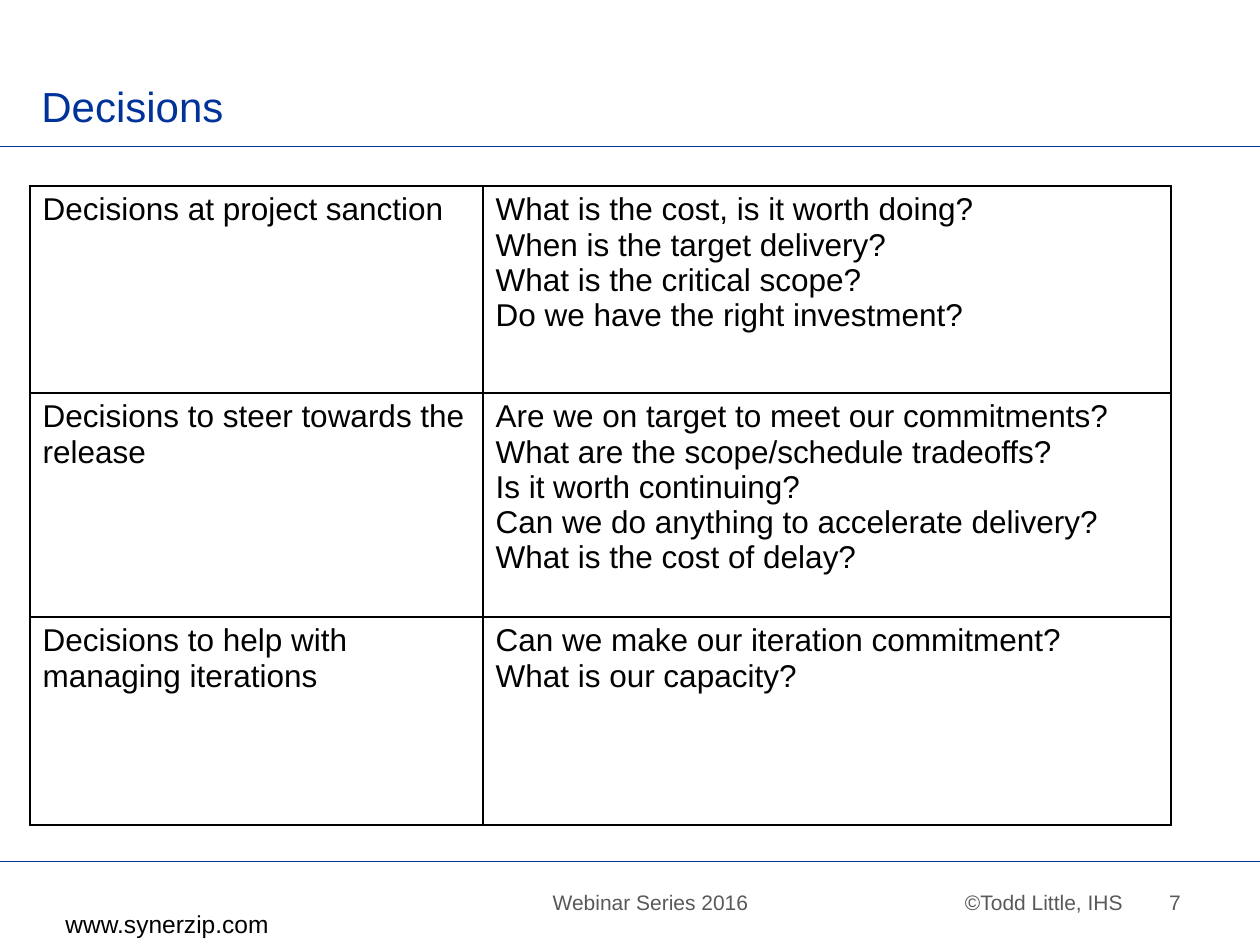
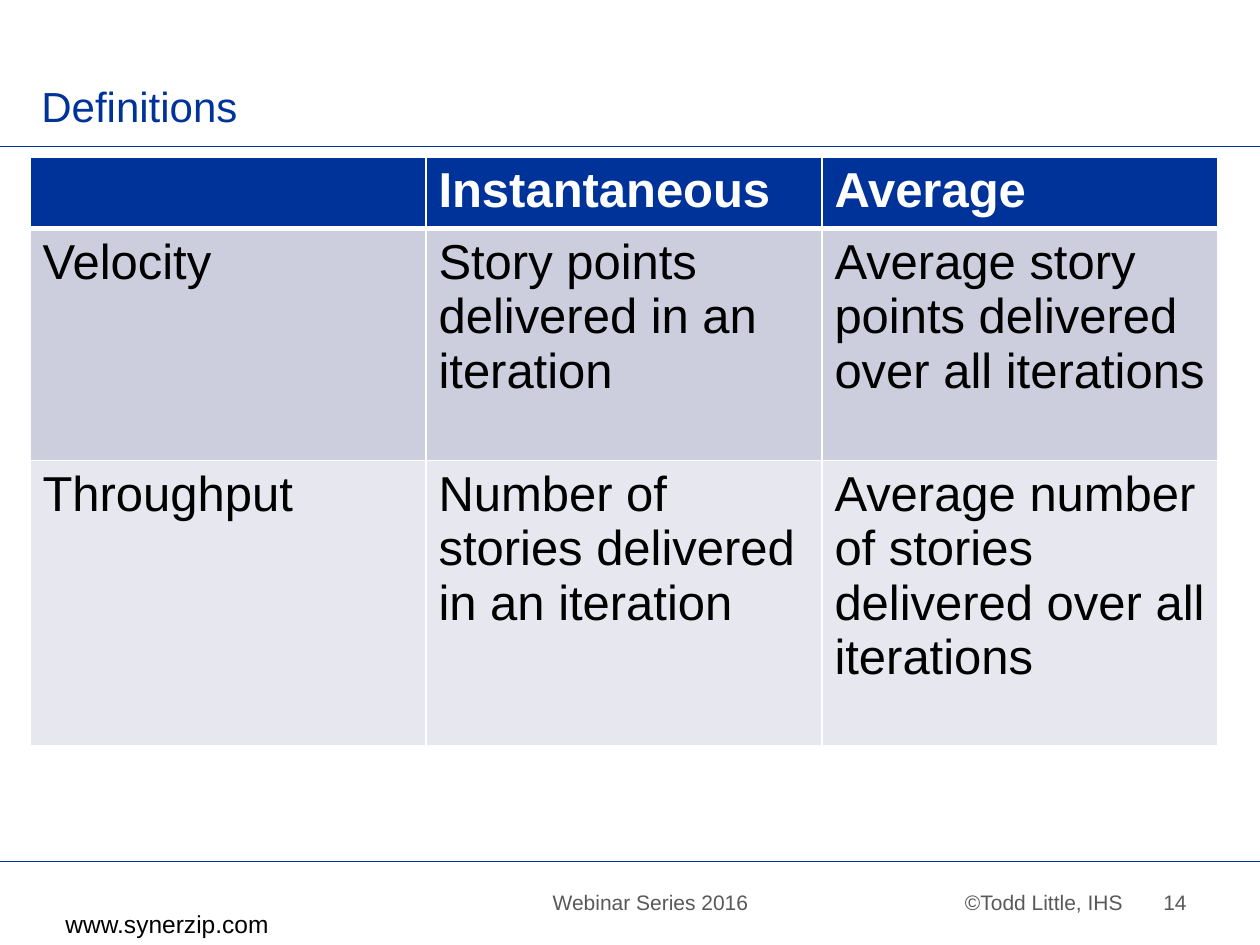
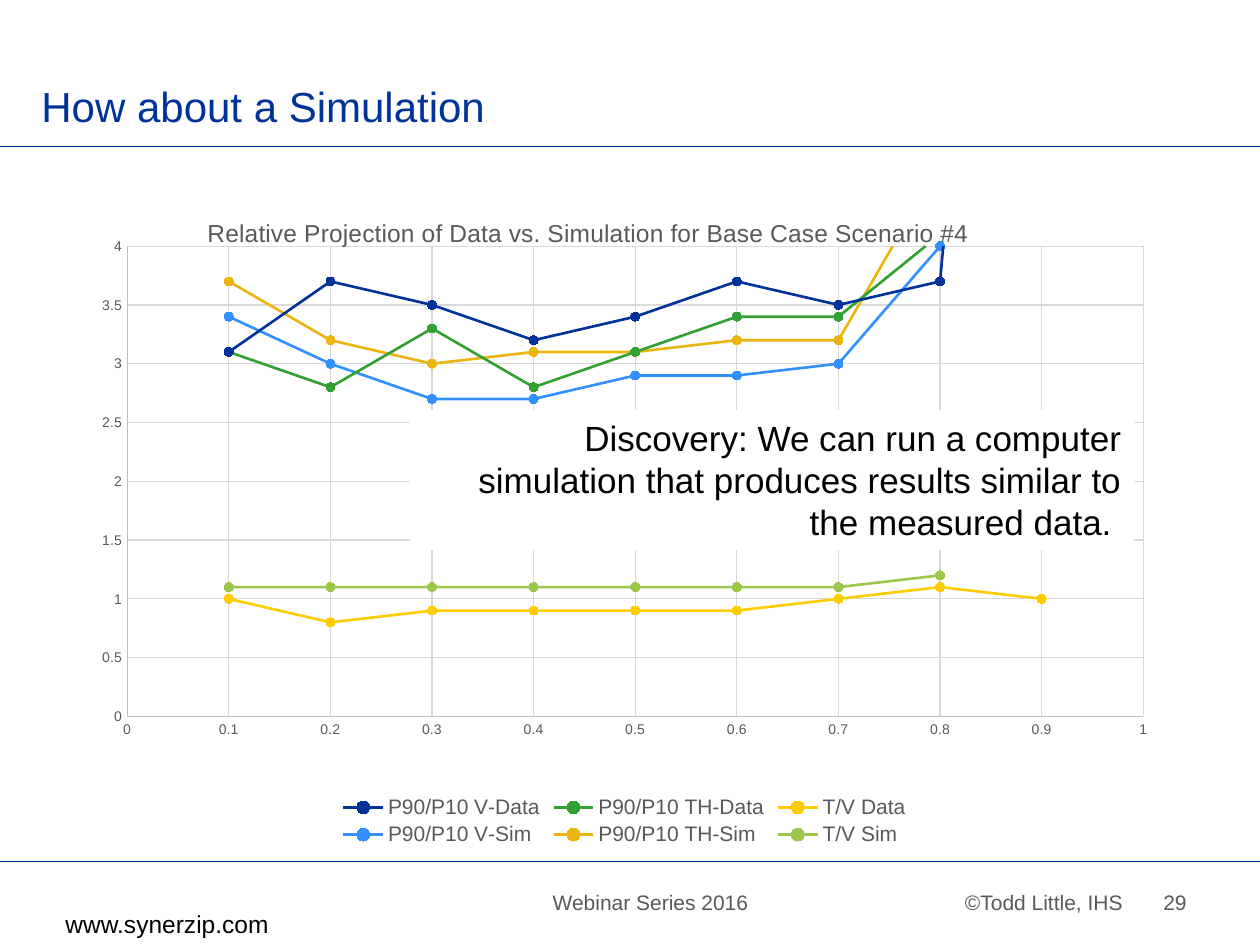
import dataclasses
import typing

import lxml.etree
import pptx
import pptx.chart.data
import pptx.dml.color
import pptx.enum.chart
import pptx.enum.shapes
import pptx.enum.text
import pptx.oxml.ns
import pptx.util

PX = 914400 / 126
FONT = "Arial"
COLORS = {
    "navy": "003399", "black": "000000", "white": "FFFFFF", "gray": "595959",
    "axis": "BFBFBF", "grid": "D9D9D9", "band": "CCCEDE", "pale": "E7E8EF",
    "green": "32A032", "yellow": "FFCC00", "blue": "3390FF",
    "gold": "EBB40F", "lime": "9BC84B",
}
ALIGN = pptx.enum.text.PP_ALIGN
ANCHOR = pptx.enum.text.MSO_ANCHOR
qn = pptx.oxml.ns.qn


@dataclasses.dataclass(frozen=True)
class Box:
    left: int
    top: int
    width: int
    height: int

    def emu(self) -> list[int]:
        return [px(value) for value in dataclasses.astuple(self)]


@dataclasses.dataclass(frozen=True)
class TextStyle:
    size: int
    color: str
    bold: bool = False


@dataclasses.dataclass(frozen=True)
class RowLook:
    height: int
    style: TextStyle
    fill: str | None = None
    bottom_border: int = 1


@dataclasses.dataclass(frozen=True)
class Series:
    name: str
    color: str
    values: tuple[float, ...]


TITLE = TextStyle(24, "navy")
FOOTER = TextStyle(12, "gray")
SITE = TextStyle(14, "black")
DECISION = TextStyle(18, "black")
DEFINITION = TextStyle(28, "black")
DEFINITION_HEAD = TextStyle(28, "white", True)
DISCOVERY = TextStyle(20, "black")

DECISIONS = (
    ("Decisions at project sanction",
     "What is the cost, is it worth doing?\n"
     "When is the target delivery?\n"
     "What is the critical scope?\n"
     "Do we have the right investment?"),
    ("Decisions to steer towards the release",
     "Are we on target to meet our commitments?\n"
     "What are the scope/schedule tradeoffs?\n"
     "Is it worth continuing?\n"
     "Can we do anything to accelerate delivery?\n"
     "What is the cost of delay?"),
    ("Decisions to help with managing iterations",
     "Can we make our iteration commitment?\n"
     "What is our capacity?"),
)
DEFINITIONS = (
    ("", "Instantaneous", "Average"),
    ("Velocity", "Story points delivered in an iteration",
     "Average story points delivered over all iterations"),
    ("Throughput", "Number of stories delivered in an iteration",
     "Average number of stories delivered over all iterations"),
)
SERIES = (
    Series("P90/P10 V-Data", "navy", (3.1, 3.7, 3.5, 3.2, 3.4, 3.7, 3.5, 3.7, 13.2)),
    Series("P90/P10 TH-Data", "green", (3.1, 2.8, 3.3, 2.8, 3.1, 3.4, 3.4, 4.1, 13.1)),
    Series("T/V Data", "yellow", (1, 0.8, 0.9, 0.9, 0.9, 0.9, 1, 1.1, 1)),
    Series("P90/P10 V-Sim", "blue", (3.4, 3, 2.7, 2.7, 2.9, 2.9, 3, 4)),
    Series("P90/P10 TH-Sim", "gold", (3.7, 3.2, 3, 3.1, 3.1, 3.2, 3.2, 4.7)),
    Series("T/V Sim", "lime", (1.1, 1.1, 1.1, 1.1, 1.1, 1.1, 1.1, 1.2)),
)


def px(value: int) -> int:
    return round(value * PX)


def rgb(name: str) -> pptx.dml.color.RGBColor:
    return pptx.dml.color.RGBColor.from_string(COLORS[name])


def set_font(font: typing.Any, style: TextStyle) -> None:
    font.name = FONT
    font.size = pptx.util.Pt(style.size)
    font.bold = style.bold
    font.color.rgb = rgb(style.color)


def set_line(line: typing.Any, color: str, width: float) -> None:
    line.color.rgb = rgb(color)
    line.width = pptx.util.Pt(width)


def write(frame: typing.Any, text: str, style: TextStyle, align: typing.Any = ALIGN.LEFT) -> None:
    """Make a paragraph of each line; a vertical tab breaks a line inside one."""
    for index, line in enumerate(text.split("\n")):
        para = frame.paragraphs[0] if index == 0 else frame.add_paragraph()
        para.alignment = align
        for part, words in enumerate(line.split("\v")):
            if part:
                para.add_line_break()
            if words:
                span = para.add_run()
                span.text = words
                set_font(span.font, style)


def add_text(page: typing.Any, box: Box, text: str, style: TextStyle,
             align: typing.Any = ALIGN.LEFT, anchor: typing.Any = ANCHOR.TOP,
             wrap: bool = True) -> typing.Any:
    frame = page.shapes.add_textbox(*box.emu()).text_frame
    frame.word_wrap = wrap
    frame.vertical_anchor = anchor
    write(frame, text, style, align)
    return frame


def add_rule(page: typing.Any, top: int) -> None:
    rule = page.shapes.add_connector(
        pptx.enum.shapes.MSO_CONNECTOR.STRAIGHT, 0, px(top), px(1260), px(top))
    set_line(rule.line, "navy", 0.5)
    lxml.etree.SubElement(rule._element.spPr, qn("a:effectLst"))


def add_credit(page: typing.Any, number: int) -> None:
    """Set the credit and the page number on one line, the number on a centred tab."""
    frame = page.shapes.add_textbox(*Box(945, 883, 262, 38).emu()).text_frame
    frame.word_wrap = True
    frame.margin_left = px(20)
    properties = frame.paragraphs[0]._p.get_or_add_pPr()
    tabs = lxml.etree.SubElement(properties, qn("a:tabLst"))
    lxml.etree.SubElement(tabs, qn("a:tab"), pos=str(px(210)), algn="ctr")
    write(frame, f"©Todd Little, IHS\t{number}", FOOTER)


def add_page(deck: typing.Any, title: str, number: int) -> typing.Any:
    page = deck.slides.add_slide(deck.slide_layouts[6])
    for top in (146, 861):
        add_rule(page, top)
    add_text(page, Box(472, 883, 357, 38), "Webinar Series 2016", FOOTER, ALIGN.CENTER)
    add_credit(page, number)
    add_text(page, Box(53, 903, 231, 42), "www.synerzip.com", SITE, wrap=False)
    add_text(page, Box(29, 19, 1043, 118), title, TITLE, anchor=ANCHOR.BOTTOM)
    return page


def set_borders(cell: typing.Any, color: str, bottom: int) -> None:
    properties = cell._tc.get_or_add_tcPr()
    for side, width in {"L": 1, "R": 1, "T": 1, "B": bottom}.items():
        line = lxml.etree.SubElement(
            properties, qn(f"a:ln{side}"), w=str(pptx.util.Pt(width)))
        fill = lxml.etree.SubElement(line, qn("a:solidFill"))
        lxml.etree.SubElement(fill, qn("a:srgbClr"), val=COLORS[color])


def add_grid(page: typing.Any, left: int, top: int, widths: tuple[int, ...],
             looks: tuple[RowLook, ...], rows: tuple[tuple[str, ...], ...],
             border: str) -> None:
    box = Box(left, top, sum(widths), sum(look.height for look in looks))
    table = page.shapes.add_table(len(rows), len(widths), *box.emu()).table
    table.first_row = False
    table.horz_banding = False
    for column, width in zip(table.columns, widths):
        column.width = px(width)
    for row, look, texts in zip(table.rows, looks, rows):
        row.height = px(look.height)
        for cell, text in zip(row.cells, texts):
            write(cell.text_frame, text, look.style)
            set_borders(cell, border, look.bottom_border)
            if look.fill:
                cell.fill.solid()
                cell.fill.fore_color.rgb = rgb(look.fill)
            else:
                cell.fill.background()


def place_in_chart(element: typing.Any, index: int, **settings: typing.Any) -> None:
    """Give a chart part a manual layout, in shares of the chart's size."""
    layout = element.find(qn("c:layout"))
    if layout is None:
        layout = lxml.etree.Element(qn("c:layout"))
        element.insert(index, layout)
    manual = lxml.etree.SubElement(layout, qn("c:manualLayout"))
    for name, value in settings.items():
        lxml.etree.SubElement(manual, qn(f"c:{name}"), val=str(value))


def format_axis(axis: typing.Any, maximum: float, step: float) -> None:
    axis.minimum_scale = 0
    axis.maximum_scale = maximum
    axis.major_unit = step
    axis.major_tick_mark = pptx.enum.chart.XL_TICK_MARK.NONE
    axis.minor_tick_mark = pptx.enum.chart.XL_TICK_MARK.NONE
    axis.has_major_gridlines = True
    set_line(axis.major_gridlines.format.line, "grid", 0.75)
    set_line(axis.format.line, "axis", 0.75)
    set_font(axis.tick_labels.font, TextStyle(8, "gray"))
    axis.tick_labels.number_format = "General"
    axis.tick_labels.number_format_is_linked = False


def add_projection_chart(page: typing.Any) -> None:
    data = pptx.chart.data.XyChartData()
    for series in SERIES:
        points = data.add_series(series.name)
        for step, value in enumerate(series.values, start=1):
            points.add_data_point(step / 10, value)
    chart = page.shapes.add_chart(
        pptx.enum.chart.XL_CHART_TYPE.XY_SCATTER_LINES,
        *Box(84, 179, 1081, 672).emu(), data).chart
    set_font(chart.font, TextStyle(10, "black"))

    chart.has_title = True
    write(chart.chart_title.text_frame,
          "Relative Projection of Data vs. Simulation for Base Case Scenario #4",
          TextStyle(14, "gray"), ALIGN.CENTER)
    place_in_chart(chart.chart_title._element, 1, xMode="edge", yMode="edge", x=0.11, y=0.05)
    place_in_chart(chart._chartSpace.chart.plotArea, 0, layoutTarget="inner",
                   xMode="edge", yMode="edge", x=0.04, y=0.1, w=0.94, h=0.7)

    chart.has_legend = True
    chart.legend.position = pptx.enum.chart.XL_LEGEND_POSITION.BOTTOM
    chart.legend.include_in_layout = False
    set_font(chart.legend.font, TextStyle(12, "gray"))
    format_axis(chart.category_axis, 1, 0.1)
    format_axis(chart.value_axis, 4, 0.5)

    plot = chart.plots[0]
    plot.vary_by_categories = False
    for drawn, series in zip(plot.series, SERIES):
        drawn.smooth = False
        set_line(drawn.format.line, series.color, 1.5)
        drawn.marker.style = pptx.enum.chart.XL_MARKER_STYLE.CIRCLE
        drawn.marker.size = 5
        drawn.marker.format.fill.solid()
        drawn.marker.format.fill.fore_color.rgb = rgb(series.color)
        set_line(drawn.marker.format.line, series.color, 0.75)


def add_discovery(page: typing.Any) -> None:
    panel = page.shapes.add_shape(
        pptx.enum.shapes.MSO_SHAPE.RECTANGLE, *Box(410, 410, 724, 140).emu())
    panel.shadow.inherit = False
    panel.fill.solid()
    panel.fill.fore_color.rgb = rgb("white")
    panel.line.fill.background()
    panel.text_frame.word_wrap = True
    panel.text_frame.vertical_anchor = ANCHOR.TOP
    write(panel.text_frame,
          "Discovery: We can run a computer\vsimulation that produces results "
          "similar to the measured data. ", DISCOVERY, ALIGN.RIGHT)


def main() -> None:
    deck = pptx.Presentation()
    deck.slide_width = px(1260)
    deck.slide_height = px(945)

    page = add_page(deck, "Decisions", 7)
    add_grid(page, 30, 186, (453, 688),
             tuple(RowLook(height, DECISION) for height in (207, 224, 208)),
             DECISIONS, "black")

    page = add_page(deck, "Definitions", 14)
    add_grid(page, 30, 157, (396,) * 3,
             (RowLook(67, DEFINITION_HEAD, "navy", 3),
              RowLook(232, DEFINITION, "band"),
              RowLook(285, DEFINITION, "pale")),
             DEFINITIONS, "white")

    page = add_page(deck, "How about a Simulation", 29)
    add_projection_chart(page)
    add_discovery(page)

    deck.save("out.pptx")


if __name__ == "__main__":
    main()
